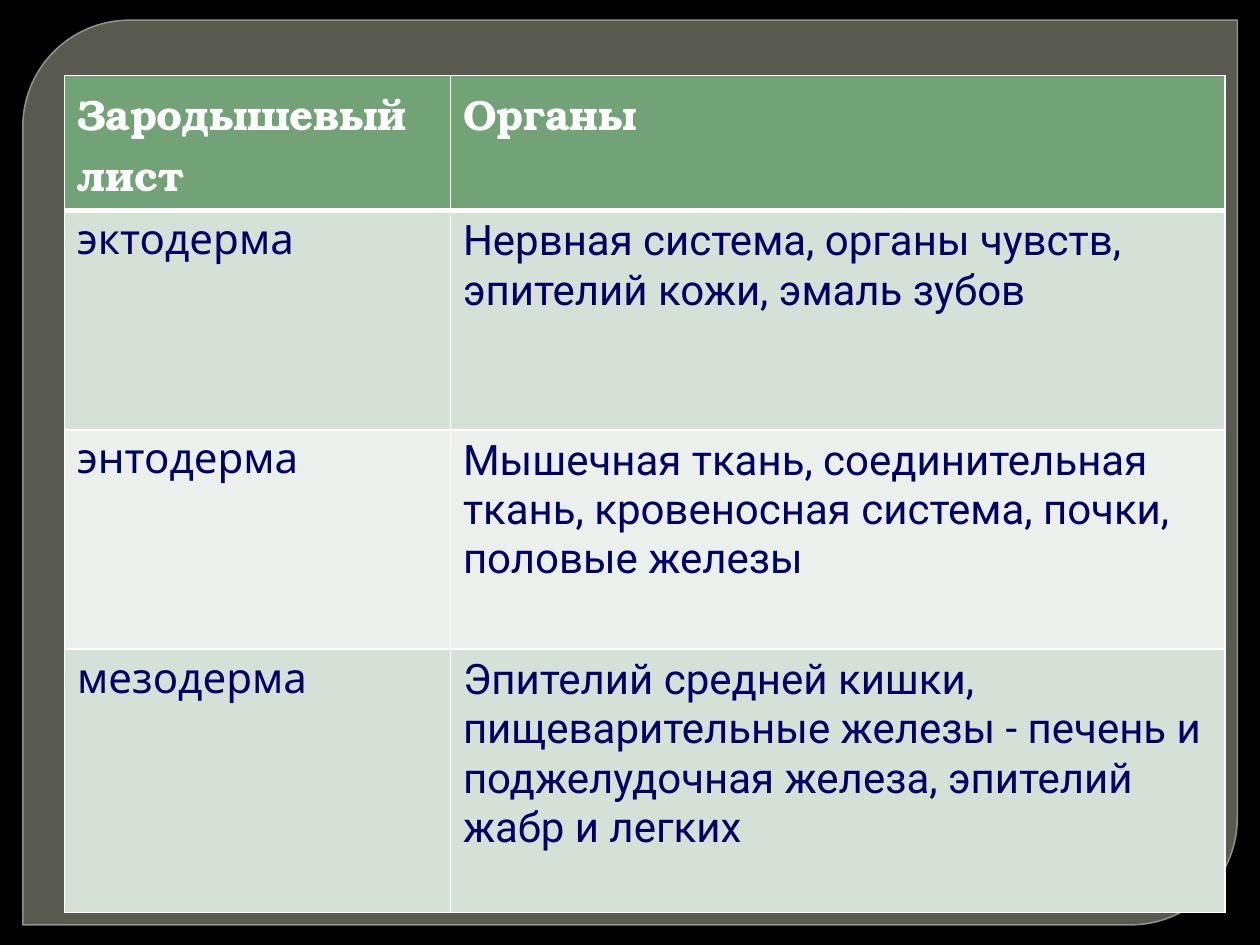
from lxml import etree
from pptx import Presentation
from pptx.dml.color import RGBColor
from pptx.enum.shapes import MSO_SHAPE
from pptx.oxml.ns import qn
from pptx.util import Pt

PANEL = MSO_SHAPE.ROUND_2_DIAG_RECTANGLE
BLACK = RGBColor(0x00, 0x00, 0x00)
WHITE = RGBColor(0xFF, 0xFF, 0xFF)
OLIVE = RGBColor(0x88, 0x8B, 0x7B)
EDGE = RGBColor(0x9D, 0xA0, 0x90)
GREEN = RGBColor(0x72, 0xA3, 0x76)
DARK = RGBColor(0xD5, 0xE0, 0xD6)
LIGHT = RGBColor(0xEB, 0xF0, 0xEC)
NAVY = RGBColor(0x00, 0x00, 0x66)

ROWS = [
    ("Зародышевый лист", "Органы"),
    ("эктодерма", "Нервная система, органы чувств, эпителий кожи, эмаль зубов"),
    ("энтодерма", "Мышечная ткань, соединительная ткань, кровеносная система, "
                  "почки, половые железы"),
    ("мезодерма", "Эпителий средней кишки, пищеварительные железы - печень и "
                  "поджелудочная железа, эпителий жабр и легких"),
]
WIDTHS = [220.5, 442.5]
HEIGHTS = [65.5, 125.3, 125.3, 150.5]
FONTS = ["Comic Neue", "Roboto"]


def fade(fill, percent):
    color = fill._xPr.find(qn("a:solidFill"))[0]
    etree.SubElement(color, qn("a:alpha"), val=str(percent * 1000))


def border(cell, side, width):
    line = etree.SubElement(cell._tc.get_or_add_tcPr(), qn("a:ln" + side), w=str(Pt(width)))
    fill = etree.SubElement(line, qn("a:solidFill"))
    etree.SubElement(fill, qn("a:srgbClr"), val=str(WHITE))


deck = Presentation()
deck.slide_width, deck.slide_height = Pt(720), Pt(540)
slide = deck.slides.add_slide(deck.slide_layouts[6])
slide.background.fill.solid()
slide.background.fill.fore_color.rgb = BLACK

panel = slide.shapes.add_shape(PANEL, Pt(13), Pt(11.5), Pt(694), Pt(517))
panel.adjustments[0] = 0.118
panel.adjustments[1] = 0
panel.shadow.inherit = False
panel.fill.solid()
panel.fill.fore_color.rgb = OLIVE
fade(panel.fill, 65)
panel.line.width = Pt(0.87)
panel.line.color.rgb = EDGE
fade(panel.line.fill, 88)

frame = slide.shapes.add_table(4, 2, Pt(36.9), Pt(43), Pt(663), Pt(sum(HEIGHTS)))
table = frame.table
for col, width in zip(table.columns, WIDTHS):
    col.width = Pt(width)
for row, height in zip(table.rows, HEIGHTS):
    row.height = Pt(height)

for r, texts in enumerate(ROWS):
    head = r == 0
    for c, text in enumerate(texts):
        cell = table.cell(r, c)
        for side in "LRTB":
            thick = (head and side == "B") or (r == 1 and side == "T")
            border(cell, side, 3 if thick else 1)
        cell.fill.solid()
        cell.fill.fore_color.rgb = GREEN if head else DARK if r % 2 else LIGHT
        cell.text = text
        font = cell.text_frame.paragraphs[0].font
        font.name = "TeX Gyre Bonum" if head else FONTS[c]
        font.size = Pt(24)
        font.bold = head
        font.color.rgb = WHITE if head else NAVY

deck.save("out.pptx")
